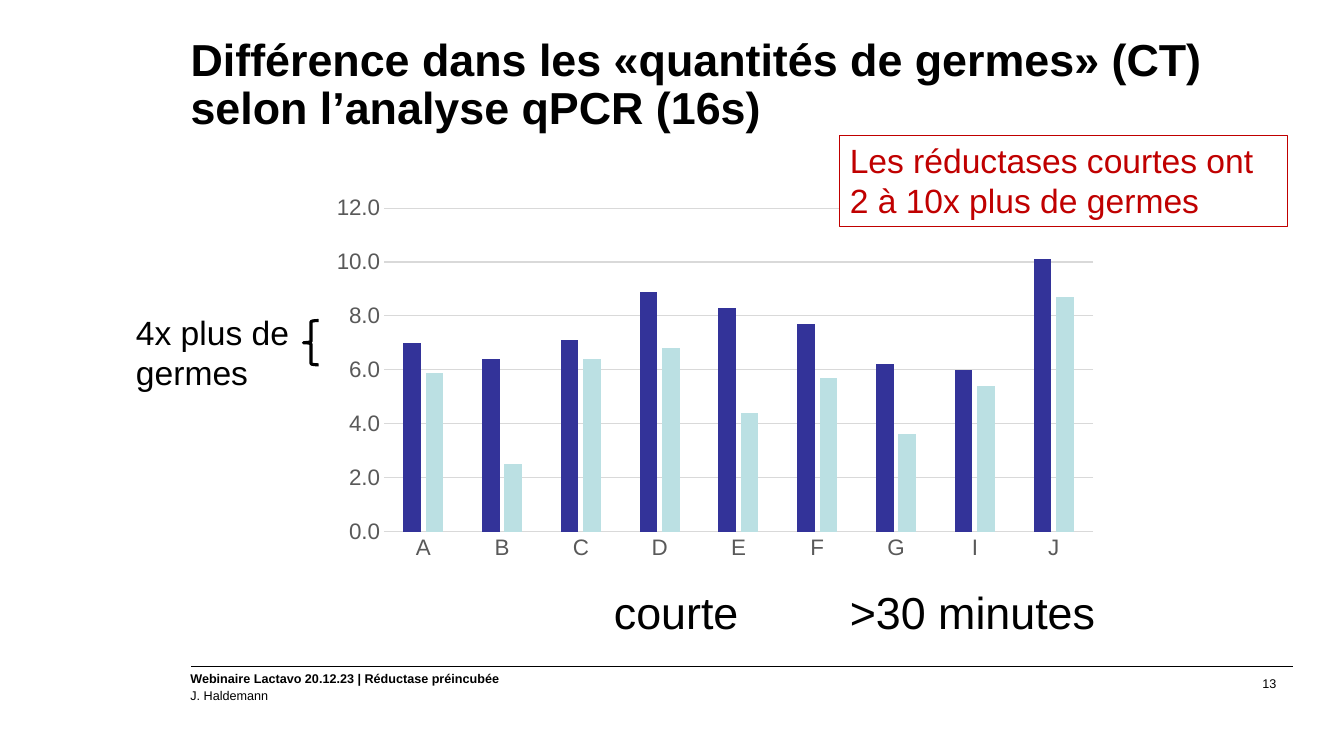
from lxml import etree
from pptx import Presentation, util as u
from pptx.chart import data as chart_data
from pptx.dml import color
from pptx.enum import chart as chart_enum, shapes, text
from pptx.oxml import ns, parse_xml

COLORS = {
    "ink": "000000",
    "paper": "FFFFFF",
    "alert": "C00000",
    "axis": "595959",
    "grid": "D9D9D9",
    "short": "333399",
    "long": "BBE0E3",
}
GERMS = {
    "Mauvais": ("short", (7, 6.4, 7.1, 8.9, 8.3, 7.7, 6.2, 6, 10.1)),
    "Bon": ("long", (5.9, 2.5, 6.4, 6.8, 4.4, 5.7, 3.6, 5.4, 8.7)),
}
PLOT_LAYOUT = {"x": 0.09, "y": 0.068, "w": 0.794, "h": 0.633}
NO_MARGINS = dict.fromkeys(
    ("margin_left", "margin_right", "margin_top", "margin_bottom"), 0
)


def rgb(name):
    return color.RGBColor.from_string(COLORS[name])


def inches(*lengths):
    return [u.Inches(length) for length in lengths]


def apply_format(target, values):
    for name, value in values.items():
        setattr(target, name, value)


def style_font(font, size, ink="ink", bold=False):
    apply_format(font, {"name": "Arial", "size": u.Pt(size), "bold": bold})
    font.color.rgb = rgb(ink)


def style_line(line, ink, width=0.75):
    line.color.rgb = rgb(ink)
    line.width = u.Pt(width)


def add_text(slide, box, words, size, ink="ink", bold=False, frame=None, paragraph=None):
    shape = slide.shapes.add_textbox(*inches(*box))
    text_frame = shape.text_frame
    apply_format(text_frame, {"word_wrap": True, **(frame or {})})
    first = text_frame.paragraphs[0]
    first.text = words
    apply_format(first, paragraph or {})
    style_font(first.runs[0].font, size, ink, bold)
    return shape


def add_label(slide, box, words, size, ink="ink", border=None, wrap=False):
    shape = add_text(slide, box, words, size, ink, frame={"word_wrap": wrap})
    shape.fill.solid()
    shape.fill.fore_color.rgb = rgb("paper")
    if border:
        style_line(shape.line, border)


def add_rule(slide, start, end):
    rule = slide.shapes.add_connector(
        shapes.MSO_CONNECTOR.STRAIGHT, *inches(*start, *end)
    )
    style_line(rule.line, "ink")
    etree.SubElement(rule._element.spPr, ns.qn("a:effectLst"))


def add_brace(slide, box):
    brace = slide.shapes.add_shape(shapes.MSO_SHAPE.RIGHT_BRACE, *inches(*box))
    brace.shadow.inherit = False
    brace.fill.solid()
    brace.fill.fore_color.rgb = rgb("paper")
    style_line(brace.line, "ink", 2.25)
    brace._element.spPr.xfrm.set("flipH", "1")


def place_plot(chart):
    plot_area = chart._chartSpace.chart.plotArea
    for layout in plot_area.findall(ns.qn("c:layout")):
        plot_area.remove(layout)
    settings = {"layoutTarget": "inner", "xMode": "edge", "yMode": "edge", **PLOT_LAYOUT}
    entries = "".join(f'<c:{name} val="{value}"/>' for name, value in settings.items())
    plot_area.insert(0, parse_xml(
        f'<c:layout {ns.nsdecls("c")}><c:manualLayout>{entries}</c:manualLayout></c:layout>'
    ))


def add_germ_chart(slide, box):
    germs = chart_data.CategoryChartData(number_format="0.0")
    germs.categories = list("ABCDEFGIJ")
    for name, (_, values) in GERMS.items():
        germs.add_series(name, values)
    chart = slide.shapes.add_chart(
        chart_enum.XL_CHART_TYPE.COLUMN_CLUSTERED, *inches(*box), germs
    ).chart
    apply_format(chart, {"has_legend": False, "has_title": False})
    style_font(chart.font, 16)

    plot = chart.plots[0]
    apply_format(plot, {"gap_width": 219, "overlap": -27, "vary_by_categories": False})
    for series, (ink, _) in zip(plot.series, GERMS.values()):
        series.format.fill.solid()
        series.format.fill.fore_color.rgb = rgb(ink)

    for axis in (chart.category_axis, chart.value_axis):
        axis.major_tick_mark = chart_enum.XL_TICK_MARK.NONE
        style_font(axis.tick_labels.font, 16, "axis")
    style_line(chart.category_axis.format.line, "grid")
    value_axis = chart.value_axis
    apply_format(value_axis, {"minimum_scale": 0, "maximum_scale": 12, "major_unit": 2})
    value_axis.format.line.fill.background()
    style_line(value_axis.major_gridlines.format.line, "grid")
    apply_format(
        value_axis.tick_labels, {"number_format": "0.0", "number_format_is_linked": False}
    )
    place_plot(chart)


def add_footer(slide):
    add_rule(slide, (12.82, 6.61), (1.89, 6.61))
    add_text(
        slide, (9.39, 6.7, 3.27, 0.16), "13", 9, frame=NO_MARGINS,
        paragraph={"alignment": text.PP_ALIGN.RIGHT, "line_spacing": 1.05},
    )
    add_text(slide, (1.79, 6.77, 2.79, 0.25), "J. Haldemann", 9)
    add_text(
        slide, (1.79, 6.61, 5.27, 0.25),
        "Webinaire Lactavo 20.12.23 | Réductase préincubée", 9, bold=True,
    )


def main():
    presentation = Presentation()
    presentation.slide_width, presentation.slide_height = inches(13.33, 7.5)
    slide = presentation.slides.add_slide(presentation.slide_layouts[6])

    add_footer(slide)
    add_text(
        slide, (1.89, 0.37, 10.88, 1.08),
        "Différence dans les «quantités de germes» (CT) selon l’analyse qPCR (16s)",
        32, bold=True, frame=NO_MARGINS, paragraph={"line_spacing": 0.9},
    )
    add_germ_chart(slide, (3.01, 1.72, 8.86, 5.07))
    add_brace(slide, (3.01, 3.18, 0.15, 0.44))
    add_text(slide, (1.25, 3.04, 1.91, 0.91), "4x plus de germes", 24)
    add_label(slide, (5.99, 5.75, 1.45, 0.64), "courte", 32)
    add_label(slide, (8.33, 5.75, 2.66, 0.64), ">30 minutes", 32)
    add_label(
        slide, (8.33, 1.34, 4.44, 0.91),
        "Les réductases courtes ont 2 à 10x plus de germes", 24, "alert", "alert", True,
    )
    presentation.save("out.pptx")


if __name__ == "__main__":
    main()
